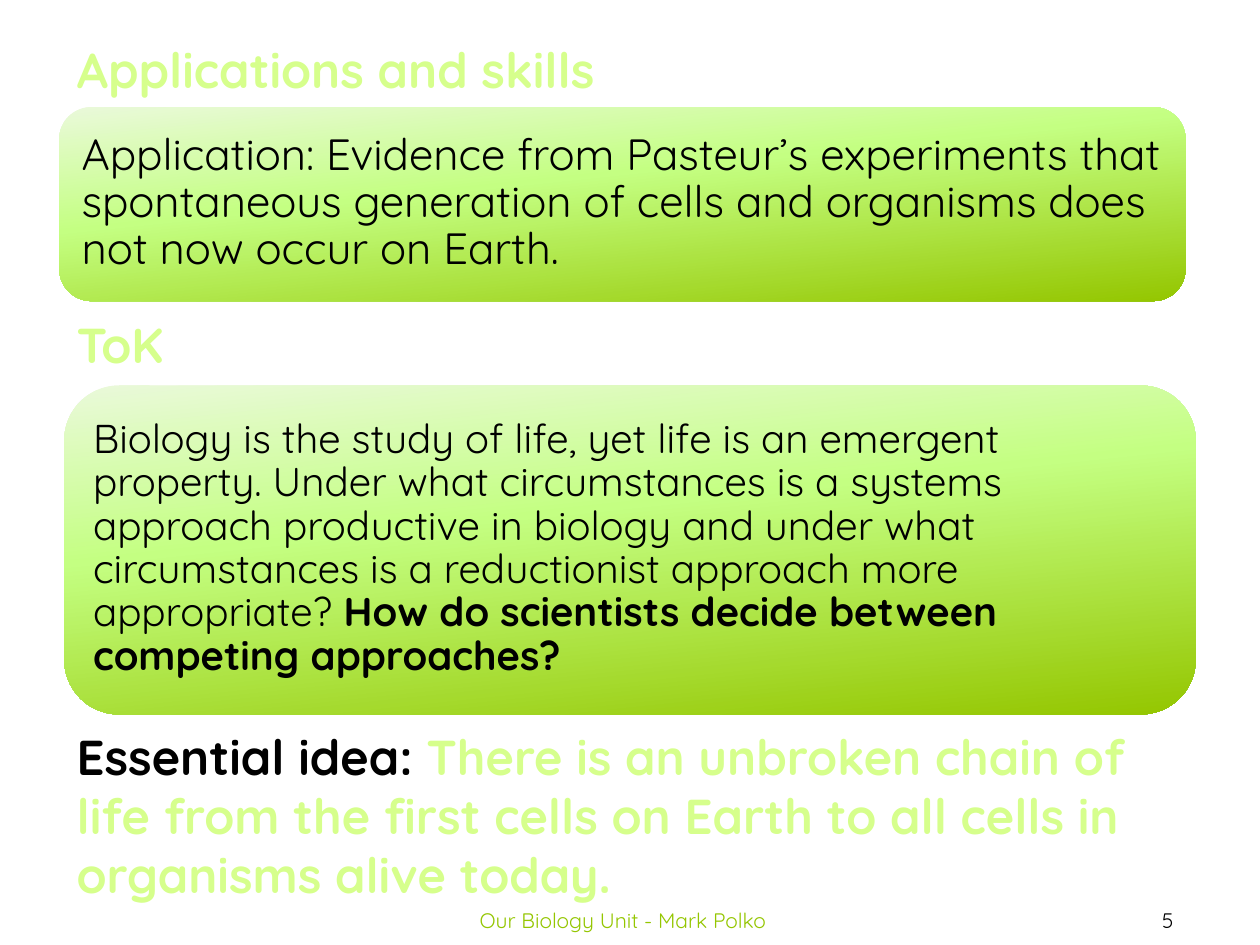
"""Build the biology slide on applications, theory of knowledge and the essential idea."""
from lxml import etree
from pptx import Presentation, util as u
from pptx.dml import color
from pptx.enum import shapes, text
from pptx.oxml import ns

WIDTH, HEIGHT = 10, 7.5
LEFT = 0.51
FONT = "Quicksand"
COLORS = {
    "ink": "000000",
    "lime": "D6FF8C",
    "leaf": "94C600",
    "outline": "434128",
}
CARD_STOPS = {0: "EAF9DA", 40: "C4FF82", 100: "94C600"}
HEADING = {"size": u.Pt(28), "bold": True}
FOOTER = {"size": u.Pt(12), "bold": False}


def inches(*lengths):
    """Turn plain numbers into slide lengths."""
    return [u.Inches(length) for length in lengths]


def sub(parent, tag, **attributes):
    """Append a DrawingML child element."""
    return etree.SubElement(parent, ns.qn(tag), attributes)


def outline_text(run):
    """Give the letters a thin dark outline."""
    properties = run.font._element
    outline = sub(properties, "a:ln", w=str(u.Pt(1)))
    sub(sub(outline, "a:solidFill"), "a:srgbClr", val=COLORS["outline"])
    properties.insert(0, outline)


def write(frame, pieces, look, frame_format, paragraph_format):
    """Fill a text frame with one paragraph of (wording, colour, changes) pieces."""
    defaults = {"word_wrap": True, "auto_size": text.MSO_AUTO_SIZE.NONE}
    for name, value in {**defaults, **frame_format}.items():
        setattr(frame, name, value)
    paragraph = frame.paragraphs[0]
    for name, value in paragraph_format.items():
        setattr(paragraph, name, value)
    for wording, tint, changes in pieces:
        run = paragraph.add_run()
        run.text = wording
        for name, value in {"name": FONT, **look, **changes}.items():
            setattr(run.font, name, value)
        run.font.color.rgb = color.RGBColor.from_string(COLORS[tint])
        if look is HEADING:
            outline_text(run)


def add_label(slide, box, pieces, look, frame_format, paragraph_format):
    """Add a text box holding one paragraph."""
    label = slide.shapes.add_textbox(*inches(*box))
    write(label.text_frame, pieces, look, frame_format, paragraph_format)


def add_heading(slide, box, pieces):
    """Add an outlined bold heading below the title."""
    add_label(slide, box, pieces, HEADING, {"vertical_anchor": text.MSO_ANCHOR.TOP}, {})


def add_title(slide, box, wording):
    """Move and format the title placeholder."""
    title = slide.shapes.title
    title.left, title.top, title.width, title.height = inches(*box)
    write(title.text_frame, [(wording, "lime", {})], HEADING,
          {"vertical_anchor": text.MSO_ANCHOR.TOP}, {"alignment": text.PP_ALIGN.LEFT})


def add_card(slide, box, text_box, size, pieces):
    """Add a rounded gradient card with its statement on top."""
    card = slide.shapes.add_shape(shapes.MSO_SHAPE.ROUNDED_RECTANGLE, *inches(*box))
    card.shadow.inherit = False
    card.line.fill.background()
    card.fill.gradient()
    card.fill.gradient_angle = 360 - 84
    stops = card._element.spPr.find(".//" + ns.qn("a:gsLst"))
    stops.clear()
    for position, tint in CARD_STOPS.items():
        sub(sub(stops, "a:gs", pos=str(position * 1000)), "a:srgbClr", val=tint)
    margins = {f"margin_{side}": u.Inches(0.1) for side in ("left", "top", "right", "bottom")}
    add_label(slide, text_box, pieces, {"size": u.Pt(size), "bold": False},
              {"vertical_anchor": text.MSO_ANCHOR.MIDDLE, **margins}, {"line_spacing": 0.9})


def add_footer(slide, left, width, wording, tint):
    """Add a centred item to the footer row."""
    add_label(slide, (left, HEIGHT - 0.4, width, 0.4), [(wording, tint, {})], FOOTER,
              {"vertical_anchor": text.MSO_ANCHOR.MIDDLE},
              {"alignment": text.PP_ALIGN.CENTER})


def main():
    """Build and save the slide."""
    deck = Presentation()
    deck.slide_width, deck.slide_height = inches(WIDTH, HEIGHT)
    slide = deck.slides.add_slide(deck.slide_layouts[5])

    add_footer(slide, 8.54, 1.46, "5", "ink")
    add_footer(slide, 3.03, 3.83, "Our Biology Unit - Mark Polko", "leaf")

    add_title(slide, (LEFT, 0.26, 4.8, 0.57), "Applications and skills")
    add_card(slide, (0.47, 0.85, 8.94, 1.54), (0.55, 0.92, 8.79, 1.39), 25, [
        ("Application: Evidence from Pasteur’s experiments that spontaneous generation "
         "of cells and organisms does not now occur on Earth.", "ink", {}),
    ])

    add_heading(slide, (LEFT, 2.45, 4.8, 0.57), [("ToK", "lime", {})])
    add_card(slide, (LEFT, 3.06, 8.98, 2.61), (0.64, 3.18, 8.72, 2.35), 23, [
        ("Biology is the study of life, yet life is an emergent property. Under what "
         "circumstances is a systems approach productive in biology and under what "
         "circumstances is a reductionist approach more appropriate? ", "ink", {}),
        ("How do scientists decide between competing approaches?", "ink", {"bold": True}),
    ])

    add_heading(slide, (LEFT, 5.72, 9.03, 1.51), [
        ("Essential idea:", "ink", {}),
        (" There is an unbroken chain of life from the first cells on Earth to all "
         "cells in organisms alive today.", "lime", {}),
    ])
    deck.save("out.pptx")


if __name__ == "__main__":
    main()
